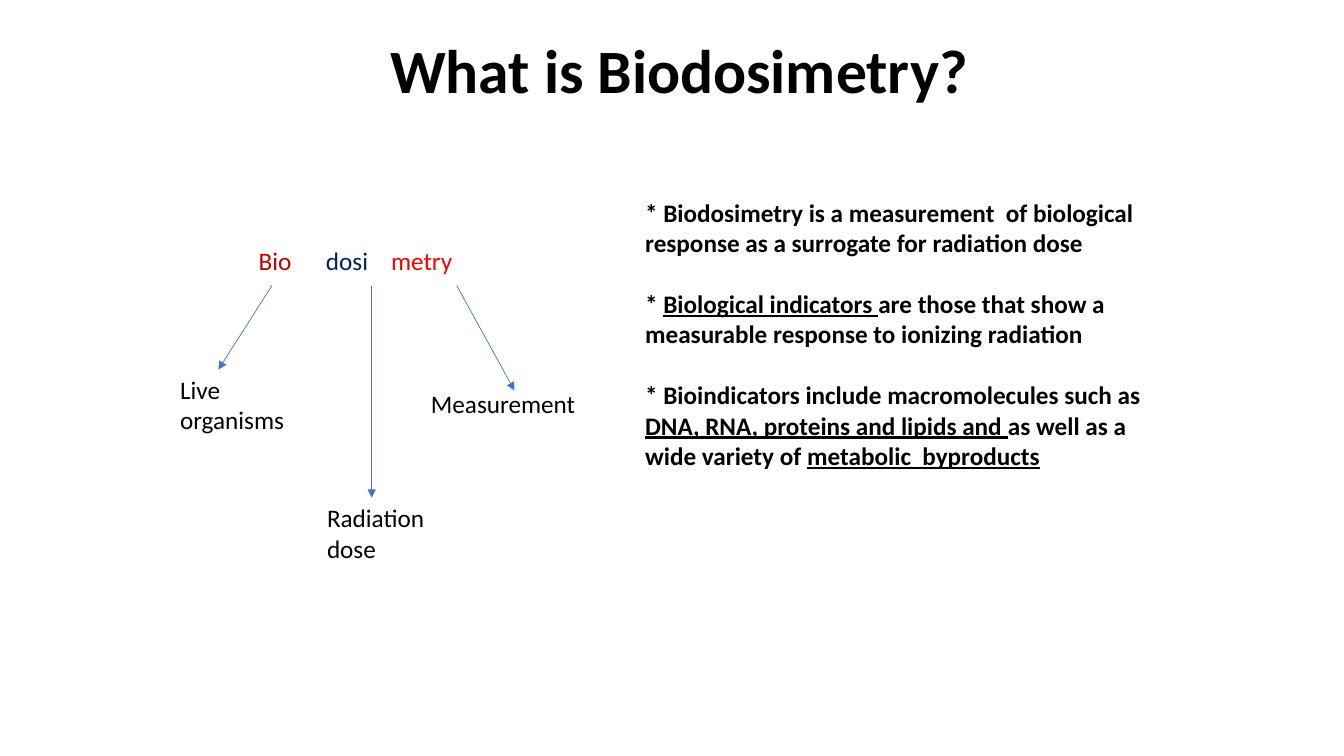
from lxml.etree import SubElement
from pptx import Presentation
from pptx.dml.color import RGBColor
from pptx.enum.shapes import MSO_CONNECTOR
from pptx.enum.text import MSO_ANCHOR, MSO_AUTO_SIZE, PP_ALIGN
from pptx.oxml.ns import qn
from pptx.util import Pt

PX = 9525  # EMU per px, 96 px to the inch
FONT = "Calibri"
COLORS = {
    "text": "000000",
    "bio": "C00000",
    "dosi": "002060",
    "metry": "FF0000",
    "arrow": "4472C4",
}
WORD_PARTS = ["bio", "dosi", "metry"]
WORD_TABS = [64, 126]
ARROW_TOP = 272

# Each statement is a list of (text, underlined) pieces.
STATEMENTS = [
    [("* Biodosimetry is a measurement  of biological response "
      "as a surrogate for radiation dose", False)],
    [("* ", False), ("Biological indicators ", True),
     ("are those that show a measurable response to ionizing radiation", False)],
    [("* Bioindicators include macromolecules such as ", False),
     ("DNA, RNA, proteins and lipids and ", True),
     ("as well as a wide variety of ", False),
     ("metabolic  byproducts", True)],
]

# Arrow start x, arrow tip, label lines, label box
MEANINGS = [
    (259, (208, 352), ["Live", "organisms"], (162, 352, 119, 68)),
    (354, (354, 474), ["Radiation", "dose"], (302, 474, 119, 68)),
    (435, (490, 372), ["Measurement"], (401, 365, 158, 38)),
]


def px(*lengths):
    return [n * PX for n in lengths]


def style_run(r, size=18, color="text", bold=False, underline=None):
    r.font.name = FONT
    r.font.size = Pt(size)
    r.font.bold = bold
    r.font.underline = underline
    r.font.color.rgb = RGBColor.from_string(COLORS[color])


def add_title(s, text, box):
    sp = s.shapes.title
    sp.left, sp.top, sp.width, sp.height = px(*box)
    tf = sp.text_frame
    tf.text = text
    tf.vertical_anchor = MSO_ANCHOR.MIDDLE
    p = tf.paragraphs[0]
    p.alignment = PP_ALIGN.LEFT
    p.line_spacing = 0.9
    style_run(p.runs[0], 44, bold=True)


def add_text_frame(s, box, wrap=True):
    tf = s.shapes.add_textbox(*px(*box)).text_frame
    tf.word_wrap = wrap
    tf.auto_size = MSO_AUTO_SIZE.SHAPE_TO_FIT_TEXT
    return tf


def add_label(s, lines, box):
    tf = add_text_frame(s, box, wrap=False)
    tf.text = "\n".join(lines)
    for p in tf.paragraphs:
        style_run(p.runs[0])


def add_statements(s, box):
    tf = add_text_frame(s, box)
    for i, pieces in enumerate(STATEMENTS):
        p = tf.add_paragraph() if i else tf.paragraphs[0]
        p.space_before = Pt(22 if i else 0)
        for text, underlined in pieces:
            r = p.add_run()
            r.text = text
            style_run(r, bold=True, underline=underlined)


def add_split_word(s, box):
    """Write the parts of the word on one line, spaced by tab stops."""
    p = add_text_frame(s, box).paragraphs[0]
    tabs = SubElement(p._p.get_or_add_pPr(), qn("a:tabLst"))
    for stop in px(*WORD_TABS):
        SubElement(tabs, qn("a:tab"), pos=str(stop), algn="l")
    for i, part in enumerate(WORD_PARTS):
        r = p.add_run()
        r.text = "\t" + part if i else part.capitalize()
        style_run(r, color=part)


def add_arrow(s, start, tip):
    c = s.shapes.add_connector(MSO_CONNECTOR.STRAIGHT, *px(*start, *tip))
    c.line.color.rgb = RGBColor.from_string(COLORS["arrow"])
    c.line.width = Pt(0.5)
    SubElement(c.line._get_or_add_ln(), qn("a:tailEnd"), type="triangle")
    SubElement(c._element.spPr, qn("a:effectLst"))


def main():
    prs = Presentation()
    prs.slide_width, prs.slide_height = px(1280, 720)
    s = prs.slides.add_slide(prs.slide_layouts[5])
    add_title(s, "What is Biodosimetry?", (362, 1, 1104, 139))
    add_statements(s, (605, 183, 497, 300))
    add_split_word(s, (237, 229, 223, 38))
    for start_x, tip, lines, box in MEANINGS:
        add_arrow(s, (start_x, ARROW_TOP), tip)
        add_label(s, lines, box)
    prs.save("out.pptx")


if __name__ == "__main__":
    main()
